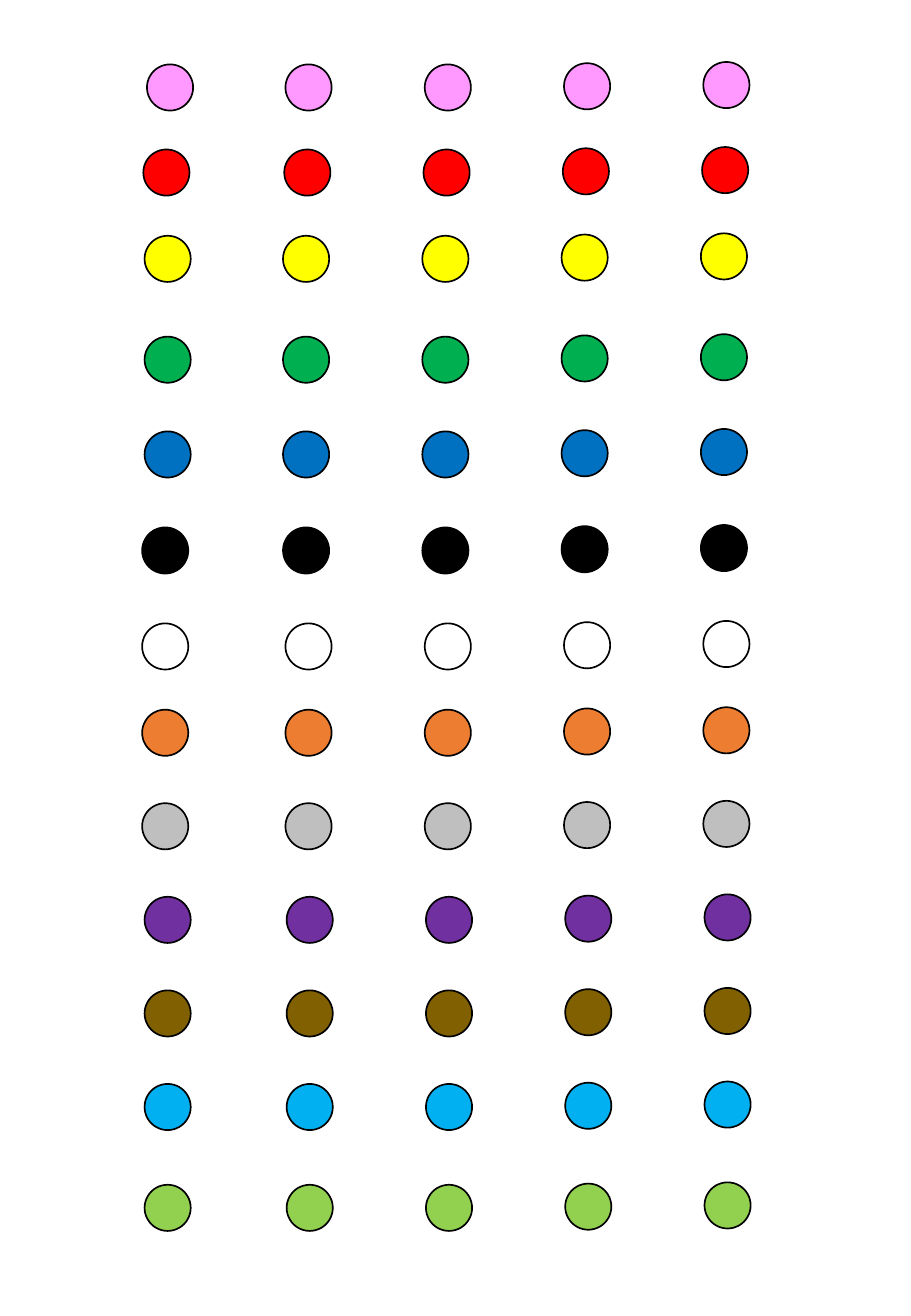
from dataclasses import dataclass

from pptx import Presentation
from pptx import util as u
from pptx.dml import color
from pptx.enum import shapes
from pptx.shapes.shapetree import GroupShapes

HUES = {
    "red": "FF0000", "yellow": "FFFF00", "green": "00B050", "blue": "0070C0",
    "black": "000000", "white": "FFFFFF", "orange": "ED7D31", "grey": "BFBFBF",
    "purple": "7030A0", "brown": "806000", "sky": "00B0F0", "lime": "92D050",
    "pink": "FF99FF",
}
SIZE = 0.38
STEP = 3.44 / 3
LIFTS = (0, 0, 0, 0.01, 0.02)


@dataclass(frozen=True)
class Row:
    hue: str
    top: float
    first: float
    second: float

    def left(self, col: int) -> float:
        """The first dot stands alone; the others follow at equal steps."""
        return self.first if col == 0 else self.second + (col - 1) * STEP


ROWS = (
    Row("red", 1.23, 1.18, 2.34),
    Row("yellow", 1.94, 1.19, 2.33),
    Row("green", 2.77, 1.19, 2.33),
    Row("blue", 3.55, 1.19, 2.33),
    Row("black", 4.34, 1.17, 2.33),
    Row("white", 5.13, 1.17, 2.35),
    Row("orange", 5.84, 1.17, 2.35),
    Row("grey", 6.61, 1.17, 2.35),
    Row("purple", 7.38, 1.19, 2.36),
    Row("brown", 8.15, 1.19, 2.36),
    Row("sky", 8.92, 1.19, 2.36),
    Row("lime", 9.75, 1.19, 2.36),
    Row("pink", 0.53, 1.21, 2.35),
)


def add_dot(group: GroupShapes, left: float, top: float, hue: str) -> None:
    dot = group.add_shape(
        shapes.MSO_SHAPE.OVAL,
        u.Inches(left), u.Inches(top), u.Inches(SIZE), u.Inches(SIZE),
    )
    dot.shadow.inherit = False
    dot.fill.solid()
    dot.fill.fore_color.rgb = color.RGBColor.from_string(HUES[hue])
    dot.line.color.rgb = color.RGBColor.from_string(HUES["black"])
    dot.line.width = u.Pt(1)


def main() -> None:
    deck = Presentation()
    deck.slide_width = u.Inches(7.5)
    deck.slide_height = u.Inches(10.83)
    slide = deck.slides.add_slide(deck.slide_layouts[6])
    for col, lift in enumerate(LIFTS):
        group = slide.shapes.add_group_shape()
        for row in ROWS:
            add_dot(group.shapes, row.left(col), row.top - lift, row.hue)
    deck.save("out.pptx")


if __name__ == "__main__":
    main()
